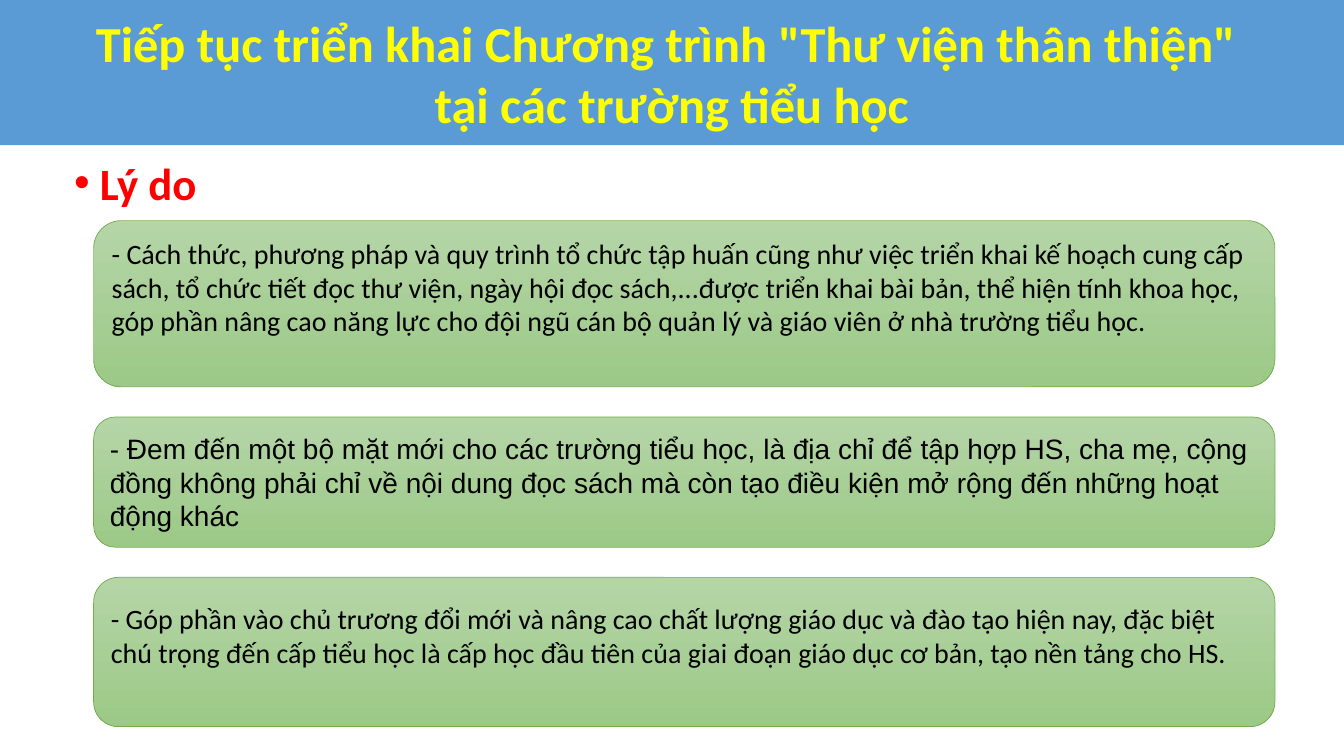
from lxml.etree import SubElement
from pptx import Presentation
from pptx.dml.color import RGBColor
from pptx.enum.shapes import MSO_SHAPE as SHAPE
from pptx.enum.text import MSO_ANCHOR as ANCHOR, MSO_AUTO_SIZE as AUTO, PP_ALIGN as ALIGN
from pptx.oxml.ns import qn
from pptx.util import Cm, Pt

BLUE = RGBColor(0x5B, 0x9B, 0xD5)
YELLOW = RGBColor(0xFF, 0xFF, 0x00)
RED = RGBColor(0xFF, 0x00, 0x00)
BLACK = RGBColor(0x00, 0x00, 0x00)
GREEN_TOP = RGBColor(0xB5, 0xD5, 0xA7)
GREEN_BOTTOM = RGBColor(0x9C, 0xC9, 0x87)
GREEN_LINE = RGBColor(0x70, 0xAD, 0x47)

TITLE_LINES = ['Tiếp tục triển khai Chương trình "Thư viện thân thiện" ',
               'tại các trường tiểu học']
# Text, font, height, bottom inset
REASONS = [
    ("- Cách thức, phương pháp và quy trình tổ chức tập huấn cũng như việc triển khai "
     "kế hoạch cung cấp sách, tổ chức tiết đọc thư viện, ngày hội đọc sách,...được triển "
     "khai bài bản, thể hiện tính khoa học, góp phần nâng cao năng lực cho đội ngũ cán bộ "
     "quản lý và giáo viên ở nhà trường tiểu học.", "Calibri", Cm(4.19), Cm(0.97)),
    ("- Đem đến một bộ mặt mới cho các trường tiểu học, là địa chỉ để tập hợp HS, cha mẹ, "
     "cộng đồng không phải chỉ về nội dung đọc sách mà còn tạo điều kiện mở rộng đến "
     "những hoạt động khác", "Arial", Cm(3.28), Cm(0.13)),
    ("- Góp phần vào chủ trương đổi mới và nâng cao chất lượng giáo dục và đào tạo hiện "
     "nay, đặc biệt chú trọng đến cấp tiểu học là cấp học đầu tiên của giai đoạn giáo dục "
     "cơ bản, tạo nền tảng cho HS.", "Calibri", Cm(3.76), Cm(0.97)),
]


def add_run(p, text, size, color, font="Calibri", bold=False):
    r = p.add_run()
    r.text = text
    r.font.name, r.font.size, r.font.bold = font, Pt(size), bold
    r.font.color.rgb = color


def fill_title(sp, left, top, width, height):
    sp.left, sp.top, sp.width, sp.height = left, top, width, height
    sp.fill.solid()
    sp.fill.fore_color.rgb = BLUE
    tf = sp.text_frame
    tf.auto_size, tf.word_wrap = AUTO.NONE, True
    tf.vertical_anchor = ANCHOR.MIDDLE
    p = tf.paragraphs[0]
    p.alignment = ALIGN.CENTER
    for i, line in enumerate(TITLE_LINES):
        if i:
            p.add_line_break()
        add_run(p, line, 36, YELLOW, bold=True)


def add_heading(s, left, top, width, height):
    tf = s.shapes.add_textbox(left, top, width, height).text_frame
    tf.word_wrap = True
    p = tf.paragraphs[0]
    p.line_spacing, p.space_before = 1.1, Pt(6)
    # Hanging bullet
    pPr = p._p.get_or_add_pPr()
    pPr.set("marL", str(Cm(0.64)))
    pPr.set("indent", str(-Cm(0.64)))
    SubElement(pPr, qn("a:buFont"), typeface="Arial")
    SubElement(pPr, qn("a:buChar"), char="•")
    add_run(p, "Lý do", 32, RED, bold=True)


def add_reason(s, left, top, width, height, text, font, inset):
    sp = s.shapes.add_shape(SHAPE.ROUNDED_RECTANGLE, left, top, width, height)
    sp.shadow.inherit = False
    sp.fill.gradient()
    sp.fill.gradient_angle = 270
    for stop, color, position in zip(sp.fill.gradient_stops, (GREEN_TOP, GREEN_BOTTOM), (0, 1)):
        stop.color.rgb, stop.position = color, position
    sp.line.color.rgb, sp.line.width = GREEN_LINE, Pt(0.5)
    tf = sp.text_frame
    tf.word_wrap, tf.vertical_anchor = True, ANCHOR.MIDDLE
    tf.margin_bottom = inset
    p = tf.paragraphs[0]
    p.alignment = ALIGN.LEFT
    add_run(p, text, 20, BLACK, font)


def add_reasons(s, left, top, width, gap):
    for text, font, height, inset in REASONS:
        add_reason(s, left, top, width, height, text, font, inset)
        top += height + gap


def main():
    prs = Presentation()
    prs.slide_width, prs.slide_height = Cm(33.87), Cm(19.05)
    s = prs.slides.add_slide(prs.slide_layouts[5])
    # Title band
    fill_title(s.shapes.title, 0, 0, prs.slide_width, Cm(3.66))
    # Heading and the stack of reasons
    add_heading(s, Cm(1.63), Cm(3.66), Cm(29.77), Cm(1.57))
    add_reasons(s, Cm(2.36), Cm(5.56), Cm(29.77), Cm(0.76))
    prs.save("out.pptx")


if __name__ == "__main__":
    main()
